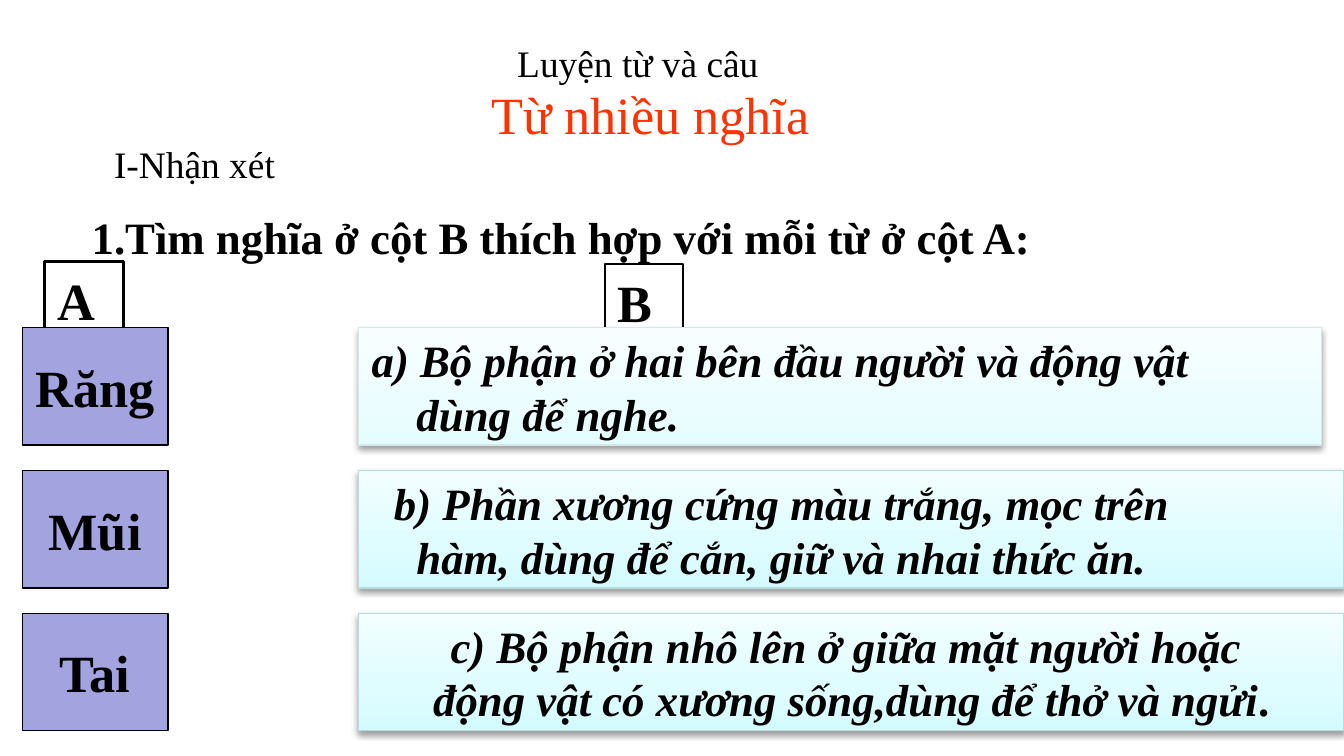
import pptx
import pptx.util
import pptx.dml.color
import pptx.enum.shapes
import pptx.enum.text
import pptx.oxml
import pptx.oxml.ns
from lxml import etree

Pt = pptx.util.Pt
RGBColor = pptx.dml.color.RGBColor
Align = pptx.enum.text.PP_ALIGN
Anchor = pptx.enum.text.MSO_ANCHOR
AutoSize = pptx.enum.text.MSO_AUTO_SIZE
qn = pptx.oxml.ns.qn

BLACK = RGBColor(0x00, 0x00, 0x00)
RED = RGBColor(0xFF, 0x33, 0x00)
LILAC = RGBColor(0xA3, 0xA3, 0xE0)
PALE_EDGE = RGBColor(0xD5, 0xE8, 0xEA)
AQUA_EDGE = RGBColor(0xB6, 0xDC, 0xDF)
# Gradient stops run from the bottom edge to the top edge
PALE = [RGBColor(0xE6, 0xFD, 0xFF), RGBColor(0xEC, 0xFD, 0xFF), RGBColor(0xF8, 0xFE, 0xFF)]
AQUA = [RGBColor(0xD3, 0xFB, 0xFF), RGBColor(0xDF, 0xFC, 0xFF), RGBColor(0xF2, 0xFE, 0xFF)]
STOPS = [0, 35, 100]


class Lesson:
    font = "Times New Roman"

    def __init__(self, page):
        self.page = page

    def add_span(self, para, text, size, color=BLACK, bold=False, italic=False):
        span = para.add_run()
        span.text = text
        span.font.name = self.font
        span.font.size = Pt(size)
        span.font.bold = bold
        span.font.italic = italic
        span.font.color.rgb = color

    def title(self, text, left, top, width, height):
        box = self.page.shapes.title
        box.left, box.top, box.width, box.height = map(Pt, (left, top, width, height))
        frame = box.text_frame
        frame.vertical_anchor = Anchor.TOP
        frame.auto_size = AutoSize.NONE
        frame.paragraphs[0].alignment = Align.LEFT
        self.add_span(frame.paragraphs[0], text, 28, RED)

    def label(self, text, left, top, width, height, size=20, bold=False):
        box = self.page.shapes.add_textbox(*map(Pt, (left, top, width, height)))
        box.text_frame.word_wrap = True
        box.text_frame.auto_size = AutoSize.SHAPE_TO_FIT_TEXT
        self.add_span(box.text_frame.paragraphs[0], text, size, bold=bold)
        return box

    def heading(self, text, left, top, line_width):
        box = self.label(text, left, top, 42, 41, 28, True)
        box.line.color.rgb = BLACK
        box.line.width = Pt(line_width)

    def rectangle(self, left, top, width, height, edge):
        box = self.page.shapes.add_shape(
            pptx.enum.shapes.MSO_SHAPE.RECTANGLE, *map(Pt, (left, top, width, height)))
        box.shadow.inherit = False
        box.line.color.rgb = edge
        box.line.width = Pt(0.75)
        box.text_frame.vertical_anchor = Anchor.MIDDLE
        return box

    def word(self, text, top):
        box = self.rectangle(12, top, 78, 63, BLACK)
        box.fill.solid()
        box.fill.fore_color.rgb = LILAC
        box.text_frame.word_wrap = False
        para = box.text_frame.paragraphs[0]
        para.alignment = Align.CENTER
        self.add_span(para, text, 28, bold=True)

    def meaning(self, lines, top, width, colors, edge):
        box = self.rectangle(192, top, width, 63, edge)
        self.shade(box, colors)
        self.drop_shadow(box)
        frame = box.text_frame
        frame.word_wrap = True
        for number, (indent, spans) in enumerate(lines):
            para = frame.add_paragraph() if number else frame.paragraphs[0]
            if indent is None:
                para.alignment = Align.CENTER
            else:
                para.alignment = Align.LEFT
                para._p.get_or_add_pPr().set("marL", str(Pt(indent)))
            for text, italic in spans:
                self.add_span(para, text, 24, bold=True, italic=italic)

    def shade(self, box, colors):
        box.fill.gradient()
        box.fill.gradient_angle = 90
        stops = box._element.spPr.find(".//" + qn("a:gsLst"))
        for stop in list(stops):
            stops.remove(stop)
        for position, color in zip(STOPS, colors):
            stop = etree.SubElement(stops, qn("a:gs"), pos=str(position * 1000))
            etree.SubElement(stop, qn("a:srgbClr"), val=str(color))

    def drop_shadow(self, box):
        effects = box._element.spPr.find(qn("a:effectLst"))
        shadow = etree.SubElement(
            effects, qn("a:outerShdw"), blurRad=str(Pt(3.1)), dist=str(Pt(1.6)),
            dir="5400000", rotWithShape="0")
        color = etree.SubElement(shadow, qn("a:srgbClr"), val=str(BLACK))
        etree.SubElement(color, qn("a:alpha"), val="38000")


def main():
    deck = pptx.Presentation()
    deck.slide_width, deck.slide_height = Pt(720), Pt(405)
    lesson = Lesson(deck.slides.add_slide(deck.slide_layouts[5]))

    # Title and instructions
    lesson.label("Luyện từ và câu", 270, 18, 192, 32)
    lesson.title("Từ nhiều nghĩa", 256, 40.5, 186, 41)
    lesson.label("I-Nhận xét", 54, 72, 168, 32)
    lesson.label("1.Tìm nghĩa ở cột B thích hợp với mỗi từ ở cột A:", 42, 109, 684, 36, 24, True)

    # Column headings
    lesson.heading("A", 24, 140, 1.5)
    lesson.heading("B", 324, 141.5, 1)

    # Words on the left, meanings on the right; None centres a line
    rows = [
        ("Răng", 516, PALE, PALE_EDGE, [
            (0, [("a) Bộ phận ở hai bên đầu người và động vật", True)]),
            (24, [("dùng để nghe.", True)])]),
        ("Mũi", 528, AQUA, AQUA_EDGE, [
            (12, [("b) Phần xương cứng màu trắng, mọc trên", True)]),
            (24, [("hàm, dùng để cắn, giữ và nhai thức ăn.", True)])]),
        ("Tai", 528, AQUA, AQUA_EDGE, [
            (None, [("c) Bộ phận nhô lên ở giữa mặt người hoặc ", True)]),
            (None, [("động vật có xương sống,dùng để thở và ngửi", True), (".", False)])]),
    ]
    for number, (word, width, colors, edge, lines) in enumerate(rows):
        top = 175.5 + number * 76.5
        lesson.word(word, top)
        lesson.meaning(lines, top, width, colors, edge)

    deck.save("out.pptx")


if __name__ == "__main__":
    main()
